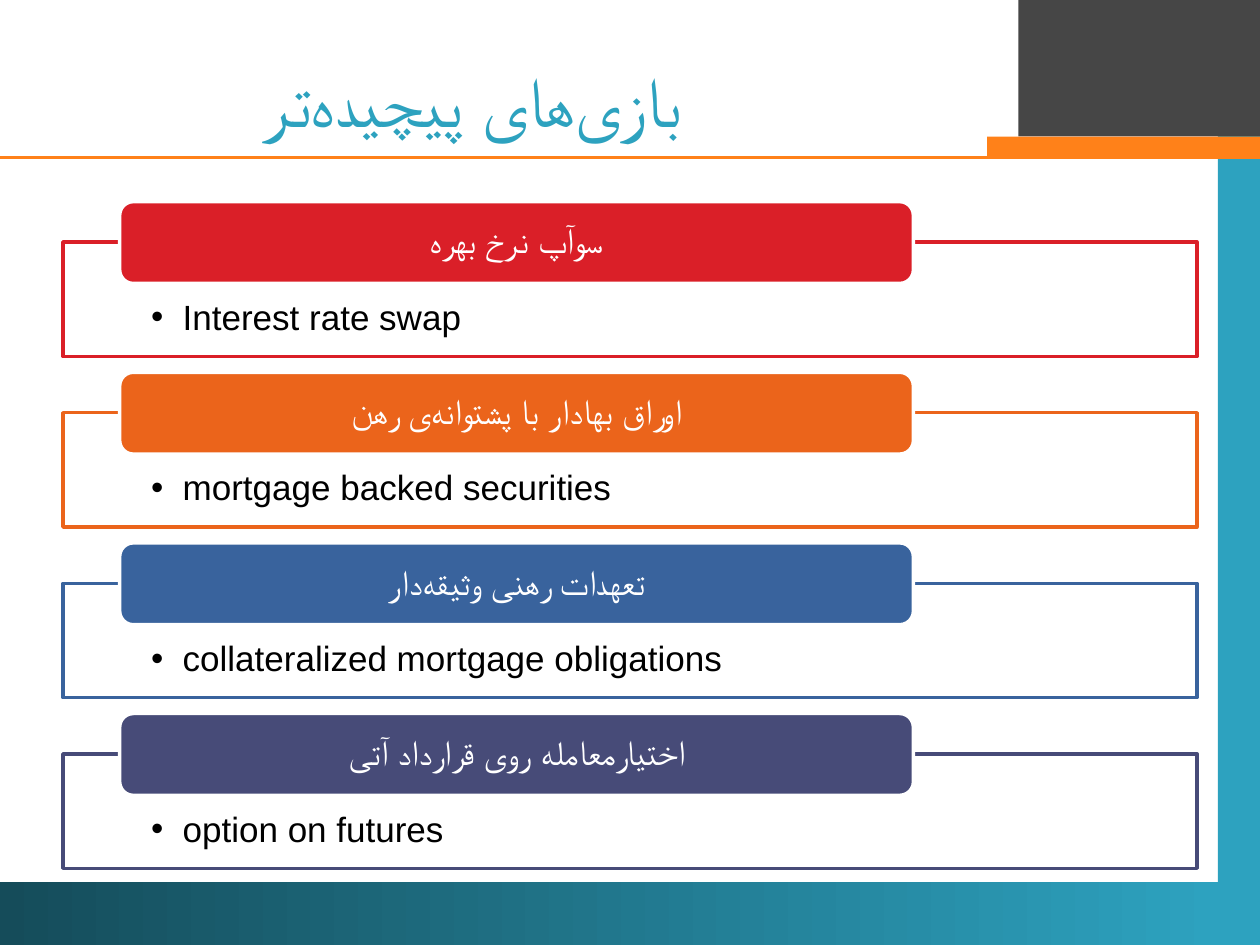
from dataclasses import dataclass

from lxml.etree import SubElement
from pptx import Presentation
from pptx.dml.color import RGBColor
from pptx.enum.shapes import MSO_CONNECTOR, MSO_SHAPE
from pptx.enum.text import MSO_ANCHOR, PP_ALIGN
from pptx.oxml.ns import qn
from pptx.util import Inches, Pt

WIDE, HIGH = Inches(10), Inches(7.5)
COLS, ROWS = 120, 90
STEP = 16.25
FONT = "Arial"
ZWNJ = chr(8204)

INK = {
    "white": "FFFFFF",
    "black": "000000",
    "teal": "2DA2BF",
    "deep": "154C5A",
    "grey": "464646",
    "amber": "FF8119",
    "red": "DA1F28",
    "orange": "EB641B",
    "blue": "39639D",
    "violet": "474B78",
}


@dataclass
class Area:
    col: float
    row: float
    cols: float
    rows: float

    def size(self) -> tuple:
        return (
            round(WIDE * self.col / COLS),
            round(HIGH * self.row / ROWS),
            round(WIDE * self.cols / COLS),
            round(HIGH * self.rows / ROWS),
        )


@dataclass
class Item:
    head: str
    note: str
    ink: str


BANDS = [
    (Area(116, 3, 4, 87), "teal"),
    (Area(0, 84, 116, 6), "deep"),
    (Area(97, 0, 23, 13), "grey"),
    (Area(94, 13, 26, 2), "amber"),
]

TITLE = f"بازی{ZWNJ}های پیچیده{ZWNJ}تر"

ITEMS = [
    Item("سوآپ نرخ بهره", "Interest rate swap", "red"),
    Item(f"اوراق بهادار با پشتوانه{ZWNJ}ی رهن", "mortgage backed securities", "orange"),
    Item(f"تعهدات رهنی وثیقه{ZWNJ}دار", "collateralized mortgage obligations", "blue"),
    Item("اختیارمعامله روی قرارداد آتی", "option on futures", "violet"),
]


def tint(name: str) -> RGBColor:
    return RGBColor.from_string(INK[name])


def write(shape, text: str, size=20, ink="white", align=PP_ALIGN.CENTER,
          anchor=MSO_ANCHOR.MIDDLE, pad=(0.24, 0, 0.24, 0), rtl=False,
          space=0.9, bullet=False) -> None:
    frame = shape.text_frame
    frame.word_wrap = True
    frame.vertical_anchor = anchor
    (frame.margin_left, frame.margin_top,
     frame.margin_right, frame.margin_bottom) = map(Inches, pad)
    para = frame.paragraphs[0]
    para.alignment = align
    para.line_spacing = space
    run = para.add_run()
    run.text = text
    run.font.size = Pt(size)
    run.font.name = FONT
    run.font.color.rgb = tint(ink)
    SubElement(run.font._element, qn("a:cs"), typeface=FONT)
    props = para._p.get_or_add_pPr()
    if rtl:
        props.set("rtl", "1")
    if bullet:
        props.set("marL", str(Inches(0.25)))
        props.set("indent", str(-Inches(0.25)))
        SubElement(props, qn("a:buFont"), typeface=FONT)
        SubElement(props, qn("a:buChar"), char="•")


def block(slide, area: Area, fill: str, line="", kind=MSO_SHAPE.RECTANGLE):
    shape = slide.shapes.add_shape(kind, *area.size())
    shape.shadow.inherit = False
    shape.fill.solid()
    shape.fill.fore_color.rgb = tint(fill)
    if line:
        shape.line.color.rgb = tint(line)
        shape.line.width = Pt(2)
    else:
        shape.line.fill.background()
    return shape


def fade(shape, first: str, last: str) -> None:
    shape.fill.gradient()
    shape.fill.gradient_angle = 0
    for stop, name in zip(shape.fill.gradient_stops, (first, last)):
        stop.color.rgb = tint(name)


def rule(slide, row: float, ink: str) -> None:
    top = round(HIGH * row / ROWS)
    line = slide.shapes.add_connector(MSO_CONNECTOR.STRAIGHT, WIDE, top, 0, top)
    line.line.color.rgb = tint(ink)
    line.line.width = Pt(2.25)
    SubElement(line._element.spPr, qn("a:effectLst"))


def entry(slide, item: Item, row: float) -> None:
    box = block(slide, Area(6, row + 3.85, 108, 10.9), "white", item.ink)
    color = box.fill._xPr.find(qn("a:solidFill"))[0]
    SubElement(color, qn("a:alpha"), val="90000")
    write(box, item.note, ink="black", align=PP_ALIGN.LEFT,
          anchor=MSO_ANCHOR.TOP, pad=(0.7, 0.46, 0.7, 0.16), bullet=True)
    tab = block(slide, Area(11.4, row, 75.6, 7.8), item.ink, "white",
                MSO_SHAPE.ROUNDED_RECTANGLE)
    write(tab, item.head, rtl=True)


def main() -> None:
    deck = Presentation()
    deck.slide_width, deck.slide_height = WIDE, HIGH
    slide = deck.slides.add_slide(deck.slide_layouts[5])
    for area, name in BANDS:
        band = block(slide, area, name)
        if name == "deep":
            fade(band, "deep", "teal")
    rule(slide, 15, "amber")
    title = slide.shapes.title
    title.left, title.top, title.width, title.height = Area(0, 6, 90, 7).size()
    write(title, TITLE, size=40, ink="teal",
          pad=(0.1, 0.05, 0.1, 0.05), rtl=True, space=1)
    for spot, item in enumerate(ITEMS):
        entry(slide, item, 19.2 + spot * STEP)
    deck.save("out.pptx")


if __name__ == "__main__":
    main()
